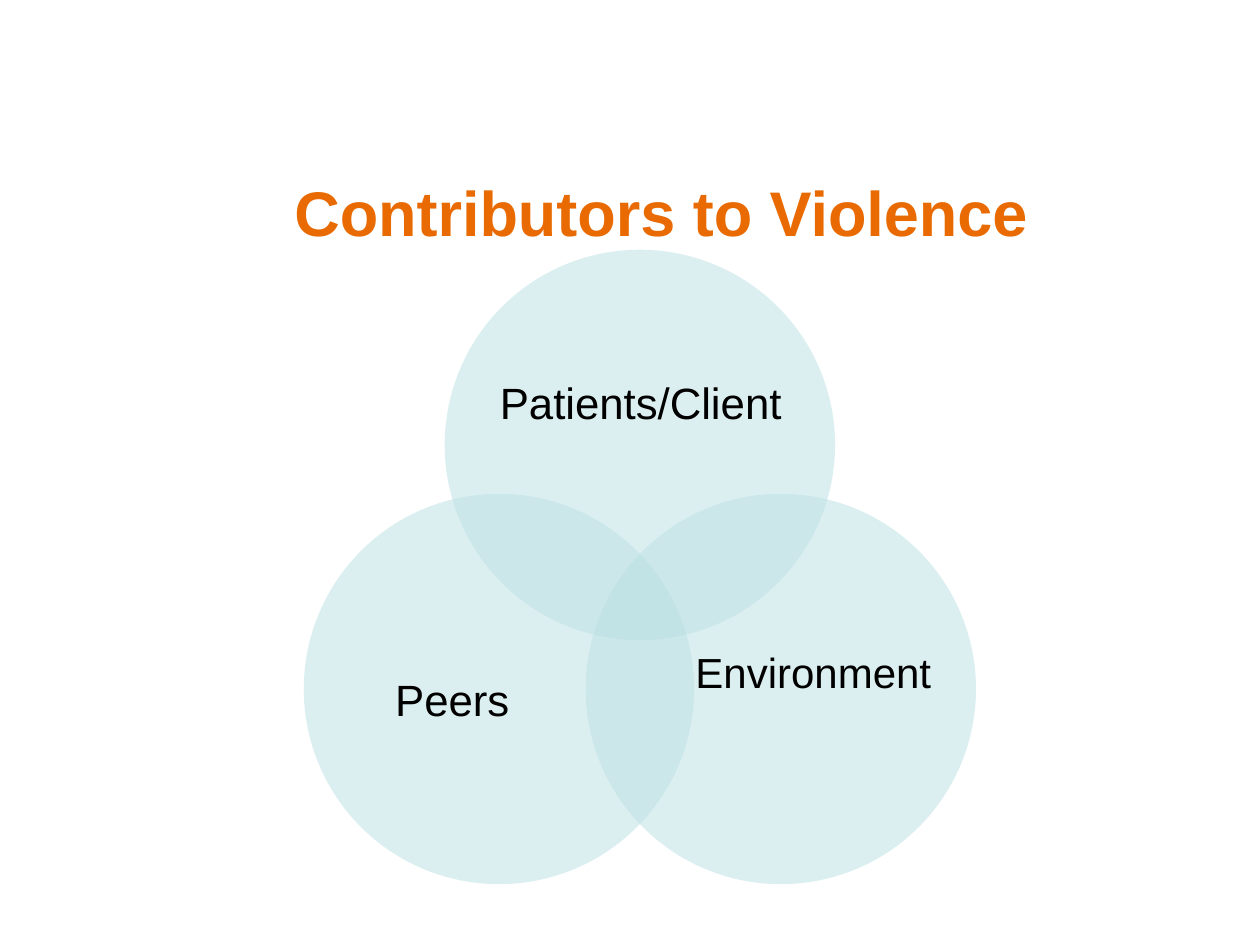
from dataclasses import dataclass
from math import cos, radians, sin

from lxml import etree
from pptx import Presentation
from pptx import util as u
from pptx.dml.color import RGBColor
from pptx.enum import shapes, text
from pptx.oxml.ns import qn

WHITE = RGBColor(0xFF, 0xFF, 0xFF)
PALE_TEAL = RGBColor(0xBB, 0xE0, 0xE3)
ORANGE = RGBColor(0xE8, 0x6A, 0x00)
BLACK = RGBColor(0x00, 0x00, 0x00)
FONT = "Arial"

# Venn geometry in cm: circle centres lie evenly on a ring
CENTRE_X, CENTRE_Y = 12.9, 12.25
RING_RADIUS = 3.28
DIAMETER = 7.87
ANGLES = (-90, 30, 150)


@dataclass(frozen=True)
class Label:
    wording: str
    left: float
    top: float
    width: float
    height: float
    size: float
    color: RGBColor = BLACK
    bold: bool = False
    align: text.PP_ALIGN = text.PP_ALIGN.CENTER
    anchor: text.MSO_ANCHOR = text.MSO_ANCHOR.MIDDLE
    line_spacing: float = 1.0
    inset: bool = True


LABELS = (
    Label("Patients/Client", 10.03, 6.4, 5.77, 3.56, 25, line_spacing=0.9, inset=False),
    Label("Peers ", 6.88, 11.99, 4.72, 4.34, 25, line_spacing=0.9, inset=False),
    Label("Contributors to Violence", 1.9, 3.18, 22.86, 2.16, 36, ORANGE, bold=True),
    Label("Environment", 13.77, 12.9, 6.55, 1.3, 24,
          align=text.PP_ALIGN.LEFT, anchor=text.MSO_ANCHOR.TOP),
)


def draw_circle(slide, angle: float) -> None:
    left = CENTRE_X + RING_RADIUS * cos(radians(angle)) - DIAMETER / 2
    top = CENTRE_Y + RING_RADIUS * sin(radians(angle)) - DIAMETER / 2
    circle = slide.shapes.add_shape(shapes.MSO_SHAPE.OVAL, u.Cm(left), u.Cm(top),
                                    u.Cm(DIAMETER), u.Cm(DIAMETER))
    circle.shadow.inherit = False
    circle.line.fill.background()
    circle.fill.solid()
    circle.fill.fore_color.rgb = PALE_TEAL
    # Half transparent, so that overlaps show
    color = circle.fill._xPr.find(qn("a:solidFill"))[0]
    etree.SubElement(color, qn("a:alpha"), val="50000")


def draw_label(slide, label: Label) -> None:
    box = slide.shapes.add_textbox(u.Cm(label.left), u.Cm(label.top),
                                   u.Cm(label.width), u.Cm(label.height))
    frame = box.text_frame
    frame.word_wrap = True
    frame.vertical_anchor = label.anchor
    if not label.inset:
        frame.margin_left = frame.margin_right = 0
        frame.margin_top = frame.margin_bottom = 0
    frame.text = label.wording
    paragraph = frame.paragraphs[0]
    paragraph.alignment = label.align
    paragraph.line_spacing = label.line_spacing
    font = paragraph.runs[0].font
    font.name = FONT
    font.size = u.Pt(label.size)
    font.bold = label.bold
    font.color.rgb = label.color


def main() -> None:
    deck = Presentation()
    deck.slide_width, deck.slide_height = u.Cm(25.4), u.Cm(19.05)
    slide = deck.slides.add_slide(deck.slide_layouts[6])
    slide.background.fill.solid()
    slide.background.fill.fore_color.rgb = WHITE

    # Overlapping circles
    for angle in ANGLES:
        draw_circle(slide, angle)

    # Title and circle labels
    for label in LABELS:
        draw_label(slide, label)

    deck.save("out.pptx")


if __name__ == "__main__":
    main()
